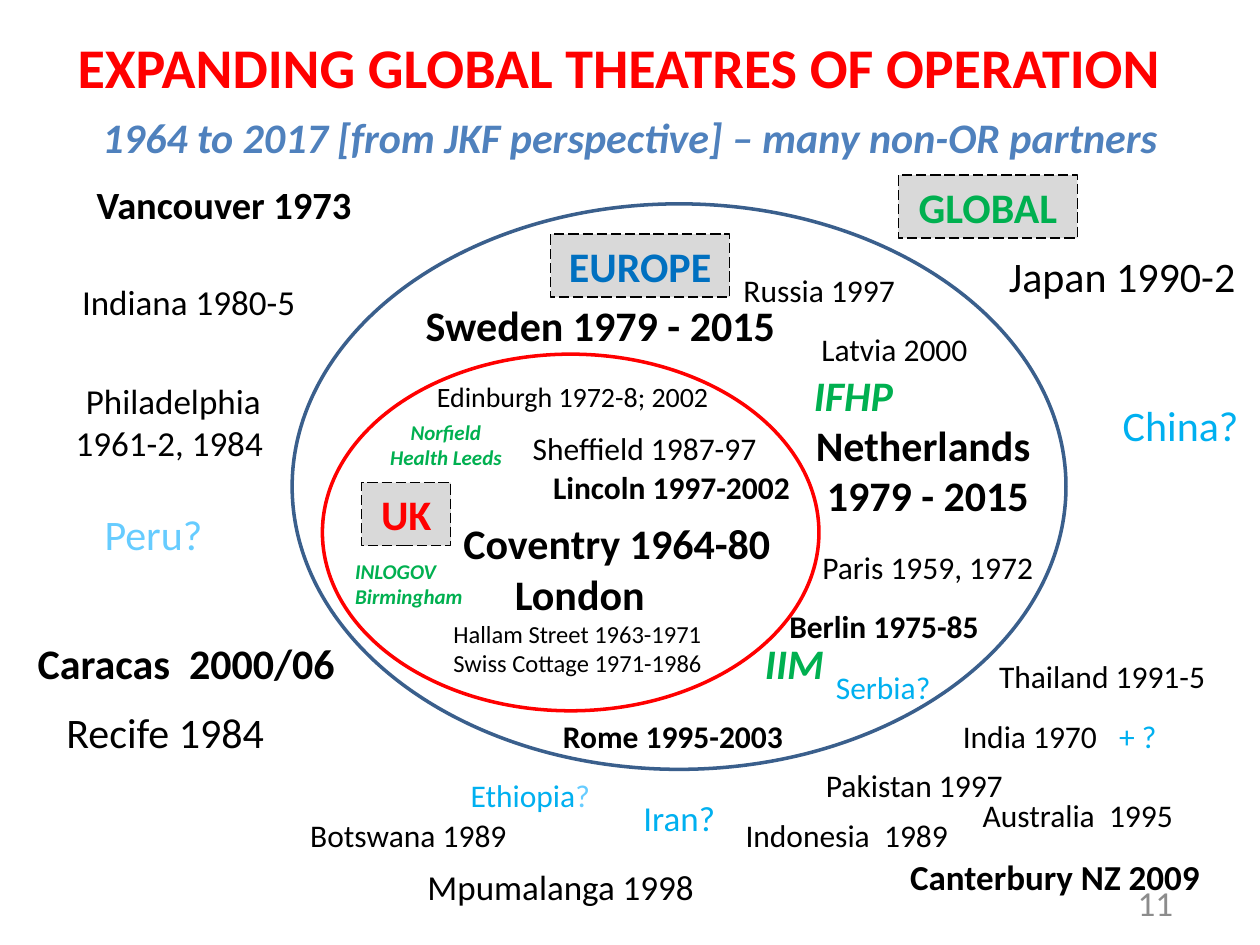
import dataclasses

import lxml.etree
import pptx
import pptx.dml.color
import pptx.enum.dml
import pptx.enum.shapes
import pptx.enum.text
import pptx.oxml.ns
import pptx.util

Cm = pptx.util.Cm
RGBColor = pptx.dml.color.RGBColor
SHAPE = pptx.enum.shapes.MSO_SHAPE
ANCHOR = pptx.enum.text.MSO_ANCHOR
LEFT = pptx.enum.text.PP_ALIGN.LEFT
CENTER = pptx.enum.text.PP_ALIGN.CENTER
RIGHT = pptx.enum.text.PP_ALIGN.RIGHT

BLACK = RGBColor(0x00, 0x00, 0x00)
RED = RGBColor(0xFF, 0x00, 0x00)
GREEN = RGBColor(0x00, 0xB0, 0x50)
BLUE = RGBColor(0x00, 0x70, 0xC0)
STEEL = RGBColor(0x4F, 0x81, 0xBD)
NAVY = RGBColor(0x3A, 0x5F, 0x8C)
CYAN = RGBColor(0x00, 0xB0, 0xF0)
SKY = RGBColor(0x66, 0xCC, 0xFF)
GREY = RGBColor(0x8C, 0x8C, 0x8C)
LIGHT_GREY = RGBColor(0xD9, 0xD9, 0xD9)


@dataclasses.dataclass(frozen=True)
class Style:
    size: float
    color: RGBColor = BLACK
    bold: bool = False
    italic: bool = False


TITLE = Style(32, RED, True)
SUBTITLE = Style(24, STEEL, True, True)
PARTNER = Style(24, GREEN, True, True)
SMALL_PARTNER = Style(12, GREEN, True, True)

PLACES = {
    Style(24, bold=True): [
        (9.09, 10.31, 6.81, LEFT, "Coventry 1964-80"),
        (0.51, 12.73, 6.6, LEFT, "Caracas  2000/06"),
        (7.9, 5.92, 8.41, CENTER, "Sweden 1979 - 2015"),
        (16.1, 8.33, 5.21, CENTER, "Netherlands \n1979 - 2015", 2),
    ],
    Style(22, bold=True): [(1.7, 3.53, 6.71, LEFT, "Vancouver 1973")],
    Style(20, bold=True): [(17.3, 17.12, 8.1, CENTER, "Canterbury NZ 2009 ")],
    Style(18, bold=True): [
        (15.29, 12.12, 5.21, CENTER, "Berlin 1975-85 "),
        (10.9, 9.32, 5.41, LEFT, "Lincoln 1997-2002"),
        (11.1, 14.33, 5.59, LEFT, "Rome 1995-2003"),
    ],
    Style(24): [
        (20.09, 4.93, 5.31, LEFT, "Japan 1990-2"),
        (1.09, 14.12, 5.69, LEFT, "Recife 1984"),
    ],
    Style(20): [
        (8.31, 17.32, 5.99, CENTER, "Mpumalanga 1998 "),
        (1.09, 5.54, 5.59, CENTER, "Indiana 1980-5 "),
        (0.89, 7.52, 5.21, CENTER, "Philadelphia 1961-2, 1984 ", 2),
    ],
    Style(18): [
        (16.1, 10.92, 5.21, CENTER, "Paris 1959, 1972"),
        (10.49, 8.53, 5.41, LEFT, "Sheffield 1987-97"),
        (5.31, 16.33, 5.99, CENTER, "Botswana 1989 "),
        (19.89, 13.13, 5, LEFT, "Thailand 1991-5"),
        (16.31, 6.53, 3.61, LEFT, "Latvia 2000"),
        (14.71, 5.33, 3.61, CENTER, "Russia 1997 "),
        (16.31, 15.32, 4.39, CENTER, "Pakistan 1997 "),
        (19.56, 15.93, 5, LEFT, "Australia  1995"),
        (14.78, 16.33, 5, LEFT, "Indonesia  1989"),
    ],
    Style(16): [(8.51, 7.52, 6.2, CENTER, "Edinburgh 1972-8; 2002 ")],
    Style(24, CYAN): [(22.2, 7.92, 3.2, CENTER, "China?")],
    Style(24, SKY): [(1.7, 10.13, 2.79, CENTER, "Peru?")],
    Style(20, CYAN): [(12.5, 15.93, 2.39, CENTER, "Iran?")],
    Style(18, CYAN): [(16.51, 13.34, 2.59, CENTER, "Serbia?")],
    SUBTITLE: [
        (1.3, 2.13, 22.81, CENTER, "1964 to 2017 [from JKF perspective] – many non-OR partners"),
    ],
    PARTNER: [
        (16.1, 7.32, 2.21, CENTER, "IFHP"),
        (14.91, 12.73, 2.21, CENTER, "IIM"),
    ],
    SMALL_PARTNER: [
        (6.91, 11.13, 3, LEFT, "INLOGOV\nBirmingham", 2),
        (7.49, 8.33, 3, CENTER, "Norfield Health Leeds", 2),
    ],
    Style(20, GREY): [(18.21, 17.64, 5.69, RIGHT, "11")],
}

REGIONS = [
    (7.29, 9.73, 1.8, "UK", RED),
    (11.1, 4.72, 3.61, "EUROPE", BLUE),
    (18.11, 3.53, 3.61, "GLOBAL", GREEN),
]


def add_run(paragraph, text, style):
    run = paragraph.add_run()
    run.text = text
    run.font.name = "Calibri"
    run.font.size = pptx.util.Pt(style.size)
    run.font.bold = style.bold
    run.font.italic = style.italic
    run.font.color.rgb = style.color


def add_paragraph(frame, align, *runs):
    paragraph = frame.paragraphs[0]
    if paragraph.runs:
        paragraph = frame.add_paragraph()
    paragraph.alignment = align
    for text, style in runs:
        add_run(paragraph, text, style)
    return paragraph


def add_tab_stop(paragraph, position):
    properties = paragraph._p.get_or_add_pPr()
    stops = lxml.etree.SubElement(properties, pptx.oxml.ns.qn("a:tabLst"))
    lxml.etree.SubElement(stops, pptx.oxml.ns.qn("a:tab"), pos=str(int(Cm(position))), algn="l")


def label_height(size, rows=1):
    return rows * size * 0.043 + 0.25


def add_frame(slide, left, top, width, height):
    label = slide.shapes.add_textbox(Cm(left), Cm(top), Cm(width), Cm(height))
    label.text_frame.word_wrap = True
    return label.text_frame


def add_place(slide, style, left, top, width, align, text, rows=1):
    frame = add_frame(slide, left, top, width, label_height(style.size, rows))
    for line in text.split("\n"):
        add_paragraph(frame, align, (line, style))


def add_two_tone_place(slide, left, top, width, align, *runs):
    frame = add_frame(slide, left, top, width, label_height(18))
    return add_paragraph(frame, align, *runs)


def add_boundary(slide, left, top, width, height, color):
    boundary = slide.shapes.add_shape(SHAPE.OVAL, Cm(left), Cm(top), Cm(width), Cm(height))
    boundary.shadow.inherit = False
    boundary.fill.background()
    boundary.line.color.rgb = color
    boundary.line.width = pptx.util.Pt(2)


def add_region(slide, left, top, width, name, color):
    region = slide.shapes.add_shape(SHAPE.RECTANGLE, Cm(left), Cm(top), Cm(width), Cm(1.27))
    region.shadow.inherit = False
    region.fill.solid()
    region.fill.fore_color.rgb = LIGHT_GREY
    region.line.color.rgb = BLACK
    region.line.width = pptx.util.Pt(0.75)
    region.line.dash_style = pptx.enum.dml.MSO_LINE.LONG_DASH
    region.text_frame.vertical_anchor = ANCHOR.TOP
    add_paragraph(region.text_frame, CENTER, (name, Style(24, color, True)))


def set_title(slide, text):
    title = slide.shapes.title
    title.left, title.top, title.width, title.height = Cm(0.71), Cm(0.53), Cm(23.8), Cm(1.63)
    title.text_frame.auto_size = pptx.enum.text.MSO_AUTO_SIZE.NONE
    title.text_frame.vertical_anchor = ANCHOR.TOP
    add_paragraph(title.text_frame, CENTER, (text, TITLE))


def add_london(slide):
    frame = add_frame(slide, 8.89, 11.33, 5.79, 2.49)
    add_paragraph(frame, CENTER, ("London ", Style(24, bold=True)))
    for address in ("Hallam Street 1963-1971", "Swiss Cottage 1971-1986"):
        add_paragraph(frame, LEFT, (address, Style(14)))


def main():
    deck = pptx.Presentation()
    deck.slide_width, deck.slide_height = Cm(25.4), Cm(19.05)
    slide = deck.slides.add_slide(deck.slide_layouts[5])
    set_title(slide, "EXPANDING GLOBAL THEATRES OF OPERATION ")
    add_boundary(slide, 6.5, 7.14, 10.01, 7.19, RED)
    add_boundary(slide, 5.89, 4.11, 15.6, 11.4, NAVY)
    for style, places in PLACES.items():
        for place in places:
            add_place(slide, style, *place)
    add_london(slide)
    add_two_tone_place(slide, 9.09, 15.52, 3.2, CENTER,
                       ("Ethiopia", Style(18, CYAN)), ("?", Style(18, SKY)))
    india = add_two_tone_place(slide, 19.16, 14.33, 4.8, LEFT,
                               ("India 1970\t", Style(18)), ("+ ?", Style(18, CYAN)))
    add_tab_stop(india, 3.15)
    for region in REGIONS:
        add_region(slide, *region)
    deck.save("out.pptx")


if __name__ == "__main__":
    main()
